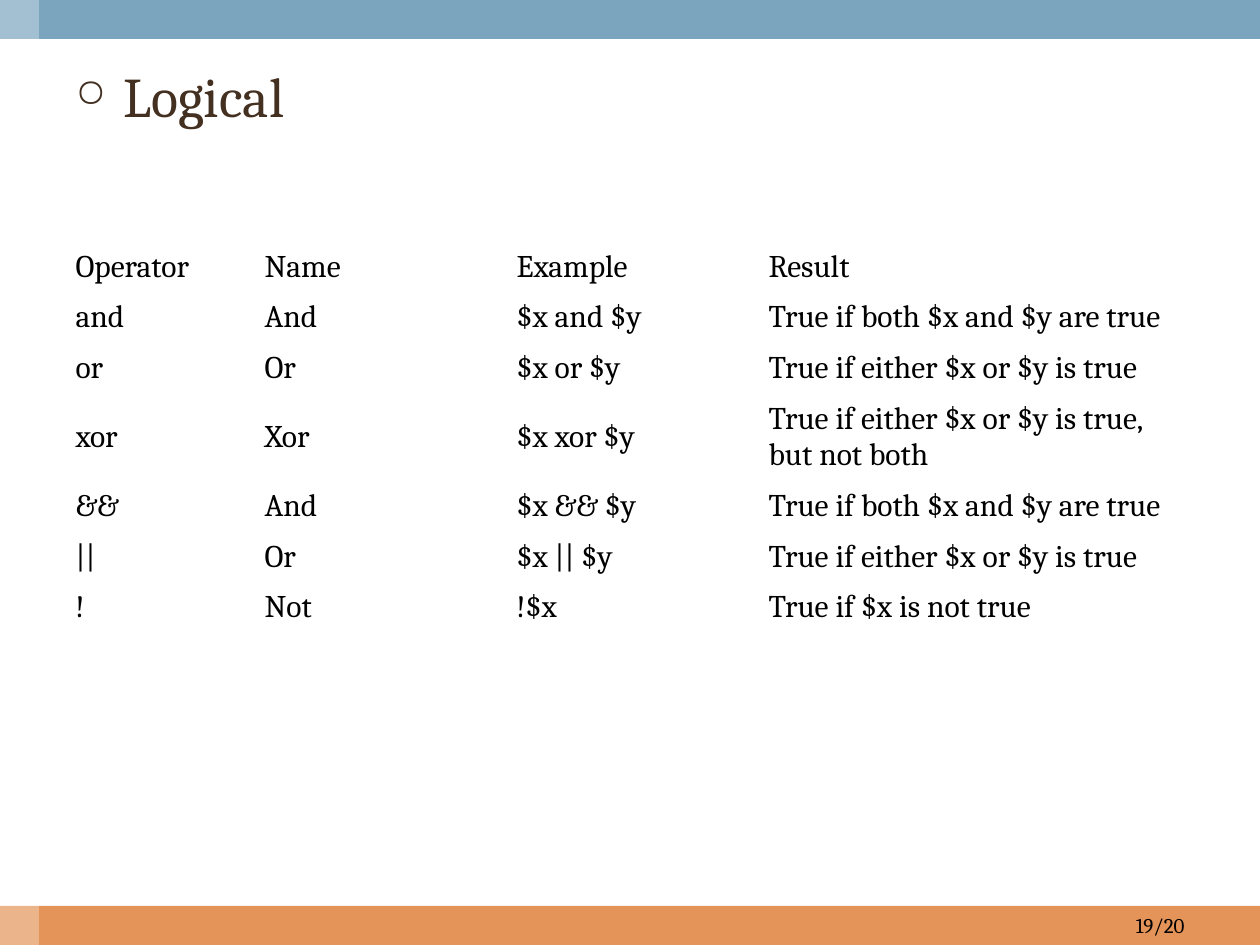
from lxml.etree import SubElement
from pptx import Presentation
from pptx.dml.color import RGBColor
from pptx.enum.shapes import MSO_SHAPE
from pptx.enum.text import MSO_ANCHOR, PP_ALIGN
from pptx.oxml.ns import qn
from pptx.util import Inches, Pt

FONT = "Cambria"
COLORS = {
    "header": "7BA5BE",
    "footer": "E49458",
    "strip": "FFFFFF",
    "title": "433021",
    "text": "000000",
}
BAR = 0.31
ROW_HEIGHT = 0.39
TALL_ROW_HEIGHT = 0.67
COLUMN_WIDTHS = [1.5, 2, 2, 3.5]
OPERATORS = [
    ("Operator", "Name", "Example", "Result"),
    ("and", "And", "$x and $y", "True if both $x and $y are true"),
    ("or", "Or", "$x or $y", "True if either $x or $y is true"),
    ("xor", "Xor", "$x xor $y", "True if either $x or $y is true, but not both"),
    ("&&", "And", "$x && $y", "True if both $x and $y are true"),
    ("||", "Or", "$x || $y", "True if either $x or $y is true"),
    ("!", "Not", "!$x", "True if $x is not true"),
]
TALL_ROW = 3


def color(name):
    return RGBColor.from_string(COLORS[name])


def write(frame, text, size, color_name):
    frame.text = text
    para = frame.paragraphs[0]
    font = para.runs[0].font
    font.name = FONT
    font.size = Pt(size)
    font.color.rgb = color(color_name)
    return para


def add_bar(page, left, top, width, height, color_name, opacity=100):
    bar = page.shapes.add_shape(
        MSO_SHAPE.RECTANGLE, Inches(left), Inches(top), Inches(width), Inches(height)
    )
    bar.shadow.inherit = False
    bar.fill.solid()
    bar.fill.fore_color.rgb = color(color_name)
    bar.line.fill.background()
    if opacity < 100:
        tint = bar.fill._xPr.find(".//" + qn("a:srgbClr"))
        SubElement(tint, qn("a:alpha"), val=str(opacity * 1000))


def add_text(page, left, top, width, height, text, size, color_name):
    box = page.shapes.add_textbox(
        Inches(left), Inches(top), Inches(width), Inches(height)
    )
    box.text_frame.word_wrap = True
    return box.text_frame, write(box.text_frame, text, size, color_name)


def add_bullet(para, char, percent, indent):
    props = para._p.get_or_add_pPr()
    props.set("marL", str(Inches(indent)))
    props.set("indent", str(-Inches(indent)))
    SubElement(props, qn("a:buSzPct"), val=str(percent * 1000))
    SubElement(props, qn("a:buChar"), char=char)


def add_operator_table(page, left, top):
    heights = [
        TALL_ROW_HEIGHT if index == TALL_ROW else ROW_HEIGHT
        for index in range(len(OPERATORS))
    ]
    table = page.shapes.add_table(
        len(OPERATORS), len(COLUMN_WIDTHS), Inches(left), Inches(top),
        Inches(sum(COLUMN_WIDTHS)), Inches(sum(heights)),
    ).table
    table.first_row = False
    table.horz_banding = False
    for column, width in zip(table.columns, COLUMN_WIDTHS):
        column.width = Inches(width)
    for row, height, texts in zip(table.rows, heights, OPERATORS):
        row.height = Inches(height)
        for cell, text in zip(row.cells, texts):
            cell.fill.background()
            cell.vertical_anchor = MSO_ANCHOR.MIDDLE
            write(cell.text_frame, text, 18, "text")


def main():
    deck = Presentation()
    deck.slide_width = Inches(10)
    deck.slide_height = Inches(7.5)
    page = deck.slides.add_slide(deck.slide_layouts[6])

    add_bar(page, 0, 7.5 - BAR, 10, BAR, "footer")
    add_bar(page, 0, 0, 10, BAR, "header")
    add_bar(page, 0, 0, BAR, 7.5, "strip", opacity=30)

    _, title = add_text(page, 0.5, 0.44, 9, 6.26, "Logical", 32, "title")
    title.space_before = Pt(6.4)
    add_bullet(title, "○", 70, 0.38)

    frame, number = add_text(page, 7.17, 7.5 - BAR, 2.33, BAR, "19/20", 12, "text")
    frame.vertical_anchor = MSO_ANCHOR.MIDDLE
    number.alignment = PP_ALIGN.RIGHT

    add_operator_table(page, 0.5, 1.92)
    deck.save("out.pptx")


if __name__ == "__main__":
    main()
